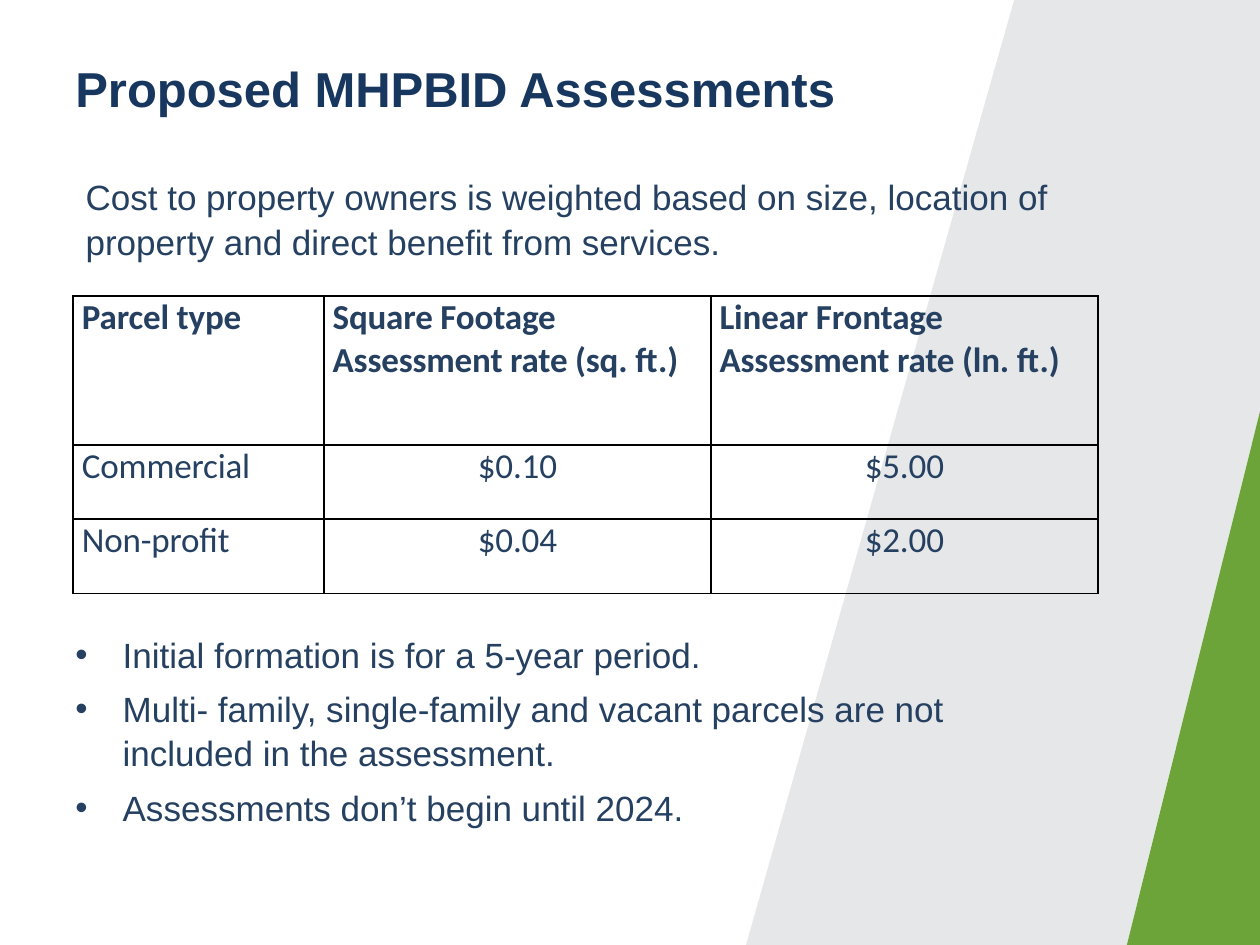
from lxml.etree import SubElement
from pptx import Presentation
from pptx.dml.color import RGBColor as RGB
from pptx.enum.shapes import MSO_SHAPE as SHAPE
from pptx.enum.text import MSO_ANCHOR as ANCHOR, PP_ALIGN as ALIGN
from pptx.oxml.ns import qn
from pptx.util import Pt

COLORS = {"title": "17375E", "text": "254061", "band": "E6E7E8",
          "green": "6CA439", "border": "000000"}

RATES = [
    ["Parcel type", "Square Footage\nAssessment rate (sq. ft.)",
     "Linear Frontage\nAssessment rate (ln. ft.)"],
    ["Commercial", "$0.10", "$5.00"],
    ["Non-profit", "$0.04", "$2.00"],
]
INTRO = ("Cost to property owners is weighted based on size, location of "
         "property and direct benefit from services.")
TERMS = [
    "Initial formation is for a 5-year period.",
    "Multi- family, single-family and vacant parcels are not included in the assessment.",
    "Assessments don’t begin until 2024.",
]


def rgb(name):
    return RGB.from_string(COLORS[name])


def style_font(font, size, color, name="Arial", bold=False):
    font.size, font.name, font.bold = Pt(size), name, bold
    font.color.rgb = rgb(color)


def fill_plain(sp, color):
    sp.shadow.inherit = False
    sp.fill.solid()
    sp.fill.fore_color.rgb = rgb(color)
    sp.line.fill.background()


def add_backdrop(s, x, y, w, h):
    top_left, shoulder, foot = 0.52 * w, 0.425 * h, 0.737 * w
    fb = s.shapes.build_freeform(Pt(x), Pt(y + h))
    fb.add_line_segments([(Pt(x + dx), Pt(y + dy)) for dx, dy in
                          [(foot, h), (w, shoulder), (w, 0), (top_left, 0)]])
    fill_plain(fb.convert_to_shape(), "band")

    length, depth = h - shoulder, w - foot
    cx, cy = x + w - depth / 2, y + h - length / 2
    sp = s.shapes.add_shape(SHAPE.RIGHT_TRIANGLE, Pt(cx - length / 2),
                            Pt(cy - depth / 2), Pt(length), Pt(depth))
    sp.rotation = 270
    fill_plain(sp, "green")


def add_text(s, x, y, w, h, lines):
    tf = s.shapes.add_textbox(Pt(x), Pt(y), Pt(w), Pt(h)).text_frame
    tf.word_wrap = True
    tf.text = "\n".join(lines)
    return tf


def add_title(s, x, y, w, h):
    tf = add_text(s, x, y, w, h, ["Proposed MHPBID Assessments"])
    tf.vertical_anchor = ANCHOR.MIDDLE
    style_font(tf.paragraphs[0].runs[0].font, 28, "title", bold=True)


def add_body(s, x, y, w, h, lines, bulleted=False):
    tf = add_text(s, x, y, w, h, lines)
    for i, p in enumerate(tf.paragraphs):
        p.line_spacing = 1.05
        if i:
            p.space_before = Pt(6)
        if bulleted:
            pPr = p._p.get_or_add_pPr()
            pPr.set("marL", str(Pt(27)))
            pPr.set("indent", str(Pt(-27)))
            SubElement(pPr, qn("a:buFont"), typeface="Arial")
            SubElement(pPr, qn("a:buChar"), char="•")
        style_font(p.runs[0].font, 20, "text")


def add_borders(cell):
    tcPr = cell._tc.get_or_add_tcPr()
    for i, side in enumerate(["lnL", "lnR", "lnT", "lnB"]):
        ln = SubElement(tcPr, qn(f"a:{side}"), w=str(Pt(1)))
        fill = SubElement(ln, qn("a:solidFill"))
        SubElement(fill, qn("a:srgbClr"), val=COLORS["border"])
        tcPr.remove(ln)
        tcPr.insert(i, ln)


def add_rates(s, x, y, w, h):
    rows, cols = len(RATES), len(RATES[0])
    table = s.shapes.add_table(rows, cols, Pt(x), Pt(y), Pt(w), Pt(h)).table
    table.first_row = table.horz_banding = False
    first_col = 143.3
    for c, col in enumerate(table.columns):
        col.width = Pt((w - first_col) / (cols - 1) if c else first_col)
    for r, row in enumerate(table.rows):
        row.height = Pt(h / 4 if r else h / 2)
        for c, cell in enumerate(row.cells):
            cell.margin_left = cell.margin_right = Pt(5)
            cell.margin_top = cell.margin_bottom = 0
            cell.fill.background()
            add_borders(cell)
            cell.text_frame.text = RATES[r][c]
            for p in cell.text_frame.paragraphs:
                if c == 0:
                    p.alignment = ALIGN.JUSTIFY
                else:
                    p.alignment = ALIGN.CENTER if r else ALIGN.LEFT
                style_font(p.runs[0].font, 20, "text", "Calibri", r == 0)
                p.runs[0].font._element.set("spc", "-10")


def main():
    prs = Presentation()
    prs.slide_width, prs.slide_height = Pt(720), Pt(540)
    s = prs.slides.add_slide(prs.slide_layouts[6])
    add_backdrop(s, 426.2, -0.5, 295.2, 541)
    add_title(s, 36, 21.6, 540, 57)
    add_rates(s, 41.8, 169.2, 585.6, 170)
    add_body(s, 41.8, 95.8, 575.3, 55.4, [INTRO])
    add_body(s, 36, 357.1, 581, 116.6, TERMS, bulleted=True)
    prs.save("out.pptx")


if __name__ == "__main__":
    main()
